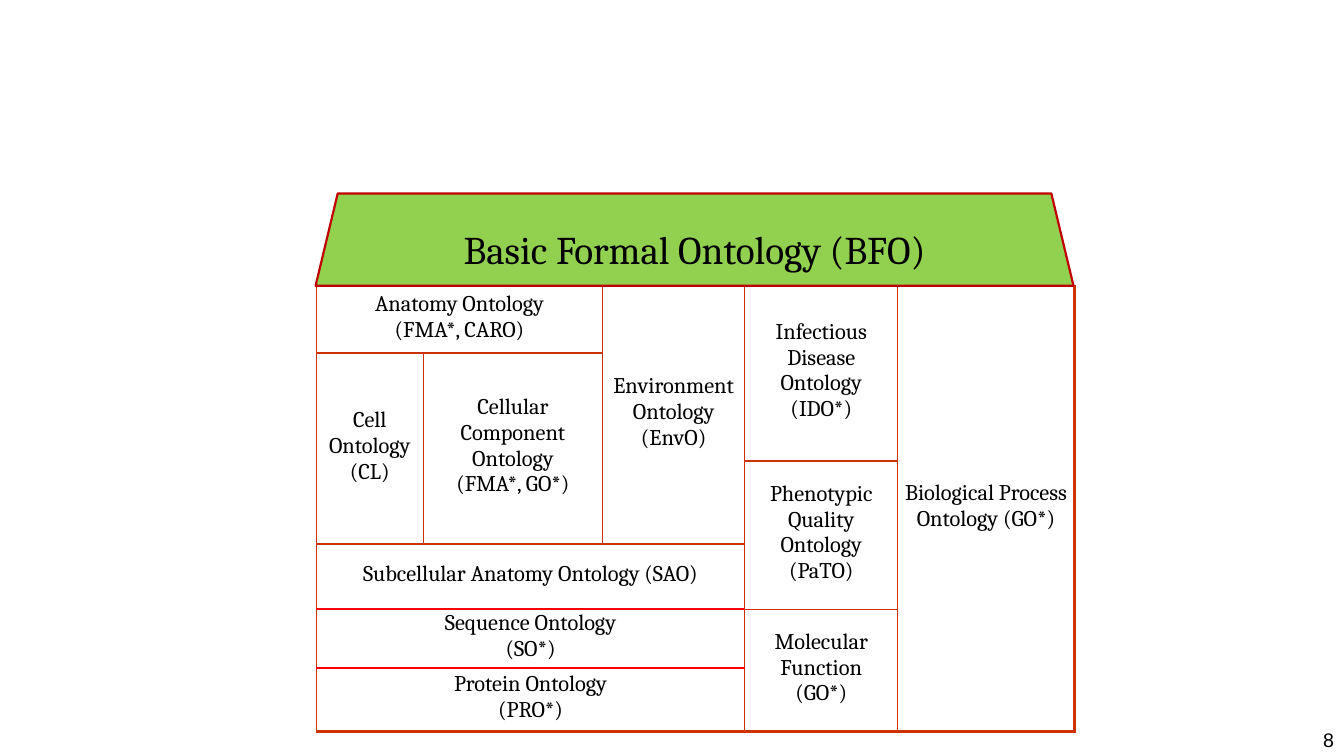
from lxml import etree
from pptx import Presentation
from pptx.dml.color import RGBColor
from pptx.enum.shapes import MSO_SHAPE
from pptx.enum.text import MSO_ANCHOR, PP_ALIGN
from pptx.oxml.ns import qn
from pptx.util import Pt

COLORS = {"text": "000000", "wall": "CC3300", "divider": "FF0000",
          "roof": "92D050", "roof_edge": "C00000", "room": "FFFFFF"}
COLUMNS = [76.3, 128.2, 101.5, 109.4, 126]
ROWS = [48.2, 77.1, 59.3, 46.6, 41.8, 45.4]

THIN = ("wall", 1)
OUTER = ("wall", 2.25)
DIVIDER = ("divider", 1.5)

# (row, column, rows spanned, columns spanned, lines, borders that are not thin)
ONTOLOGIES = [
    (0, 0, 1, 2, ["Anatomy Ontology", "(FMA*, CARO)"], {}),
    (0, 2, 3, 1, ["Environment", "Ontology", "(EnvO)"], {}),
    (0, 3, 2, 1, ["Infectious Disease Ontology", "(IDO*)"], {}),
    (0, 4, 6, 1, ["Biological Process", "Ontology (GO*)"], {"R": OUTER, "B": OUTER}),
    (1, 0, 2, 1, ["Cell Ontology", "(CL)"], {}),
    (1, 1, 2, 1, ["Cellular", "Component", "Ontology", "(FMA*, GO*)"], {}),
    (2, 3, 2, 1, ["Phenotypic Quality", "Ontology\v(PaTO)"], {}),
    (3, 0, 1, 3, ["Subcellular Anatomy Ontology (SAO)"], {"B": DIVIDER}),
    (4, 0, 1, 3, ["Sequence Ontology", "(SO*)"], {"T": DIVIDER, "B": DIVIDER}),
    (4, 3, 2, 1, ["Molecular Function", "(GO*)"], {"B": OUTER}),
    (5, 0, 1, 3, ["Protein Ontology", "(PRO*)"], {"T": DIVIDER, "B": OUTER}),
]


def rgb(name):
    return RGBColor.from_string(COLORS[name])


def write(frame, lines, size=16, font="Cambria", color="text", align=PP_ALIGN.CENTER):
    for index, line in enumerate(lines):
        paragraph = frame.add_paragraph() if index else frame.paragraphs[0]
        paragraph.text = line
        paragraph.alignment = align
        for run in paragraph.runs:
            run.font.size = Pt(size)
            run.font.name = font
            run.font.color.rgb = rgb(color)


def set_borders(cell, borders):
    properties = cell._tc.get_or_add_tcPr()
    for side in "LRTB":
        color, width = borders.get(side, THIN)
        line = etree.SubElement(properties, qn(f"a:ln{side}"), w=str(Pt(width)))
        fill = etree.SubElement(line, qn("a:solidFill"))
        etree.SubElement(fill, qn("a:srgbClr"), val=COLORS[color])


def add_roof(slide, left, top, width, height):
    roof = slide.shapes.add_shape(
        MSO_SHAPE.TRAPEZOID, Pt(left), Pt(top), Pt(width), Pt(height))
    roof.adjustments[0] = 0.24
    roof.shadow.inherit = False
    roof.fill.solid()
    roof.fill.fore_color.rgb = rgb("roof")
    roof.line.color.rgb = rgb("roof_edge")
    roof.line.width = Pt(1.55)
    frame = roof.text_frame
    frame.margin_top = Pt(16)
    frame.vertical_anchor = MSO_ANCHOR.MIDDLE
    write(frame, ["Basic Formal Ontology (BFO)"], size=28)


def add_rooms(slide, left, top):
    house = slide.shapes.add_table(len(ROWS), len(COLUMNS), Pt(left), Pt(top),
                                   Pt(sum(COLUMNS)), Pt(sum(ROWS))).table
    house.first_row = house.horz_banding = False
    for column, width in zip(house.columns, COLUMNS):
        column.width = Pt(width)
    for row, height in zip(house.rows, ROWS):
        row.height = Pt(height)

    for row, column, row_span, column_span, lines, borders in ONTOLOGIES:
        last_row, last_column = row + row_span - 1, column + column_span - 1
        room = house.cell(row, column)
        room.merge(house.cell(last_row, last_column))
        for r in range(row, last_row + 1):
            for c in range(column, last_column + 1):
                part = house.cell(r, c)
                set_borders(part, borders)
                part.fill.solid()
                part.fill.fore_color.rgb = rgb("room")
                part.margin_left = part.margin_right = part.margin_top = 0
                part.margin_bottom = Pt(3.6)
        room.vertical_anchor = MSO_ANCHOR.MIDDLE
        write(room.text_frame, lines)


def add_page_number(slide, left, top, width, height):
    page_number = slide.shapes.add_textbox(Pt(left), Pt(top), Pt(width), Pt(height))
    frame = page_number.text_frame
    frame.word_wrap = True
    frame.vertical_anchor = MSO_ANCHOR.MIDDLE
    write(frame, ["8"], size=14, font="Arial", align=PP_ALIGN.RIGHT)


def main():
    presentation = Presentation()
    presentation.slide_width, presentation.slide_height = Pt(960), Pt(540)
    slide = presentation.slides.add_slide(presentation.slide_layouts[6])
    add_rooms(slide, 226, 204)
    add_roof(slide, 225.4, 138.2, 541.4, 66)
    add_page_number(slide, 792, 516.2, 168, 23.8)
    presentation.save("out.pptx")


if __name__ == "__main__":
    main()
